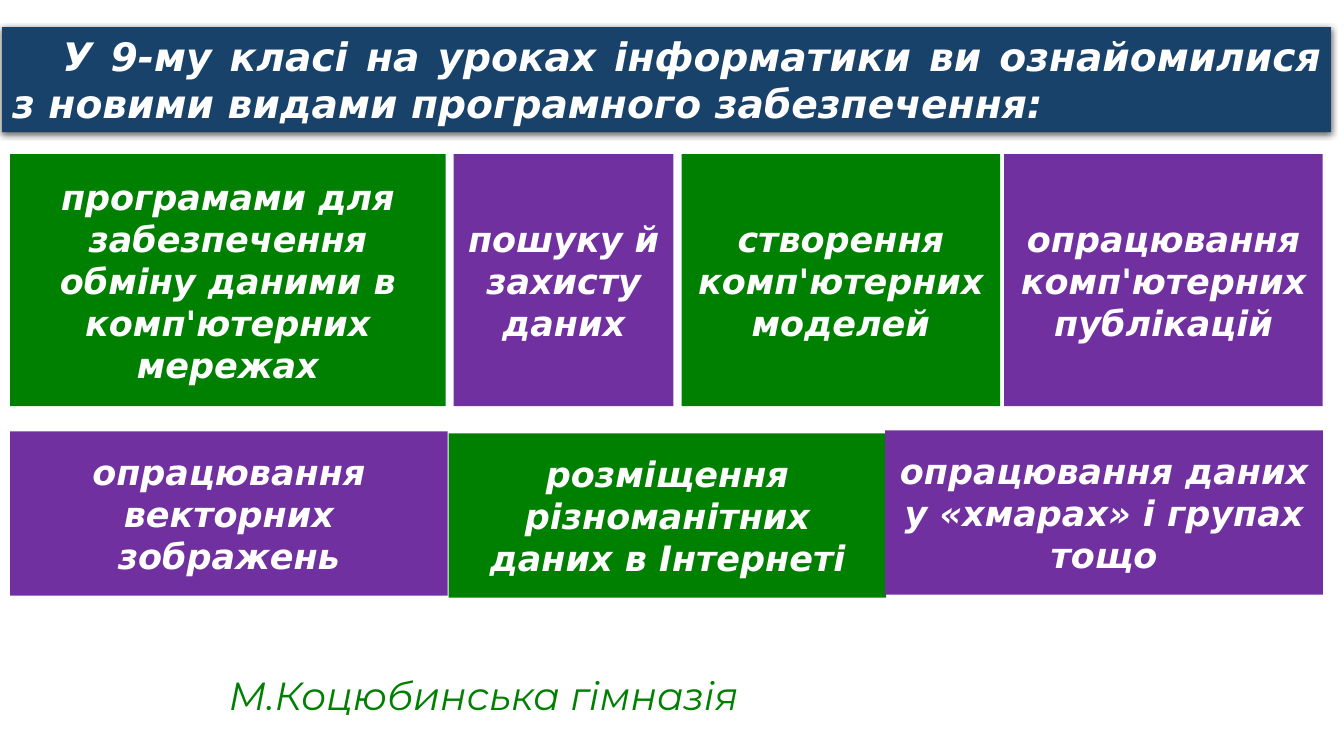
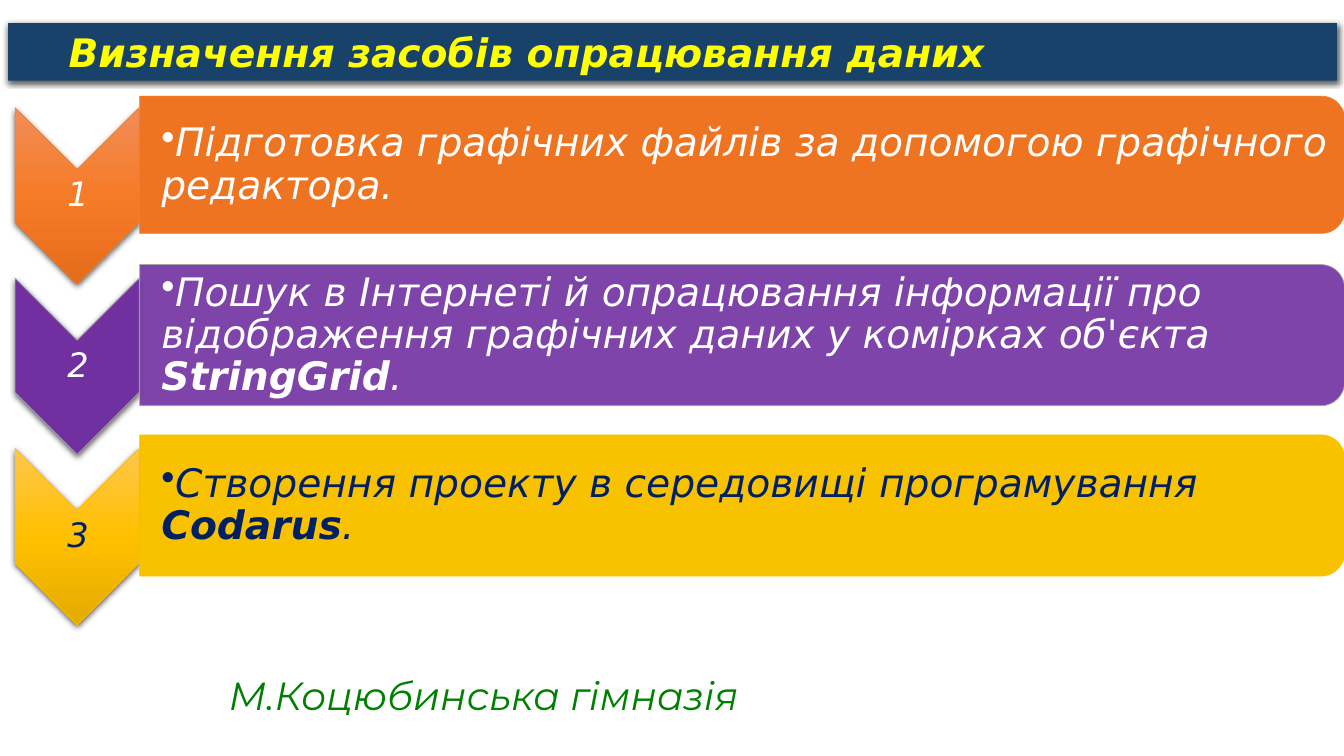
import pptx
import pptx.util
import pptx.dml.color
import pptx.enum.shapes
import pptx.enum.text
import pptx.oxml
import pptx.oxml.ns
import lxml.etree

PX = 9144  # 100 px to the inch
FONT = "DejaVu Sans"
HUES = {
    "navy": "19426B", "white": "FFFFFF", "yellow": "FFFF00", "ink": "002060",
    "green": "008000", "purple": "7030A0", "grey": "A5A5A5",
    "orange": "EF7421", "rust": "ED7D31", "gold": "F8C200", "amber": "FFC000",
}
FORMS = pptx.enum.shapes.MSO_SHAPE
ALIGN = pptx.enum.text.PP_ALIGN
ANCHOR = pptx.enum.text.MSO_ANCHOR
qn = pptx.oxml.ns.qn
rgb = pptx.dml.color.RGBColor.from_string


def write(shape, text, size=28, hue="white", font=FONT, bold=False,
          align=ALIGN.LEFT, anchor=ANCHOR.MIDDLE, inset=(10, 5, 10, 5),
          space=None, indent=0, bullet=None):
    """Fill a shape with one italic paragraph; parts between * are bold."""
    frame = shape.text_frame
    frame.word_wrap = True
    frame.auto_size = pptx.enum.text.MSO_AUTO_SIZE.NONE
    frame.vertical_anchor = anchor
    (frame.margin_left, frame.margin_top,
     frame.margin_right, frame.margin_bottom) = [n * PX for n in inset]
    para = frame.paragraphs[0]
    para.alignment = align
    para.line_spacing = space
    props = para._p.get_or_add_pPr()
    props.set("marL", "0")
    props.set("indent", str(indent * PX))
    if bullet:
        lxml.etree.SubElement(props, qn("a:buChar"), char=bullet)
    for i, part in enumerate(text.split("*")):
        run = para.add_run()
        run.text = part
        run.font.name = font
        run.font.size = pptx.util.Pt(size)
        run.font.bold = bold or i % 2 == 1
        run.font.italic = True
        run.font.color.rgb = rgb(HUES[hue])


def paint(shape, fill, line=None, shade=False, stops=None, alpha=None):
    """Set fill, outline and shadow of a shape."""
    props = shape.element.spPr
    if stops:
        shape.fill.gradient()
        shape.fill.gradient_angle = 270
        grad = props.find(qn("a:gradFill"))
        grad.set("rotWithShape", "0")
        marks = grad.find(qn("a:gsLst"))
        for old in list(marks):
            marks.remove(old)
        for spot, tone in zip((0, 50000, 100000), stops):
            mark = lxml.etree.SubElement(marks, qn("a:gs"), pos=str(spot))
            lxml.etree.SubElement(mark, qn("a:srgbClr"), val=tone)
    else:
        shape.fill.solid()
        shape.fill.fore_color.rgb = rgb(HUES[fill])
        if alpha:
            tone = props.find(qn("a:solidFill")).find(qn("a:srgbClr"))
            lxml.etree.SubElement(tone, qn("a:alpha"), val=str(alpha * 1000))
    if line:
        shape.line.color.rgb = rgb(HUES[line])
        shape.line.width = pptx.util.Pt(0.5)
    else:
        shape.line.fill.background()
    shape.shadow.inherit = False
    if shade:
        cast = lxml.etree.SubElement(
            props.find(qn("a:effectLst")), qn("a:outerShdw"), blurRad="57150",
            dist="19050", dir="5400000", algn="ctr", rotWithShape="0")
        tone = lxml.etree.SubElement(cast, qn("a:srgbClr"), val="000000")
        lxml.etree.SubElement(tone, qn("a:alpha"), val="63000")


deck = pptx.Presentation()
deck.slide_width = pptx.util.Inches(13.33)
deck.slide_height = pptx.util.Inches(7.5)

# Title band and footer of both slides
heads = [
    ("У 9-му класі на уроках інформатики ви ознайомилися "
     "з новими видами програмного забезпечення:", "white", 2, 27, 104),
    ("Визначення засобів опрацювання даних", "yellow", 8, 23, 57),
]
slides = []
for text, hue, x, y, h in heads:
    slide = deck.slides.add_slide(deck.slide_layouts[5])
    band = slide.shapes.title
    band.left, band.top, band.width, band.height = x * PX, y * PX, 1318 * PX, h * PX
    paint(band, "navy", shade=True)
    write(band, text, hue=hue, bold=True, align=ALIGN.JUSTIFY,
          anchor=ANCHOR.TOP, indent=50)
    foot = slide.shapes.add_textbox(217 * PX, 661 * PX, 693 * PX, 55 * PX)
    write(foot, "М.Коцюбинська гімназія", hue="green", font="Montserrat",
          anchor=ANCHOR.TOP)
    slides.append(slide)

# Slide 1: kinds of software
tiles = [
    (10, 153, 432, 250, "green",
     "програмами для забезпечення обміну даними в комп'ютерних мережах"),
    (450, 153, 218, 250, "purple", "пошуку й захисту даних"),
    (676, 153, 316, 250, "green", "створення комп'ютерних моделей"),
    (996, 153, 316, 250, "purple", "опрацювання комп'ютерних публікацій"),
    (10, 428, 434, 163, "purple", "опрацювання векторних зображень"),
    (445, 430, 434, 163, "green", "розміщення різноманітних даних в Інтернеті"),
    (878, 427, 434, 163, "purple", "опрацювання даних у «хмарах» і групах тощо"),
]
for x, y, w, h, fill, text in tiles:
    tile = slides[0].shapes.add_shape(FORMS.RECTANGLE, x * PX, y * PX, w * PX, h * PX)
    paint(tile, fill)
    write(tile, text, size=25, bold=True, align=ALIGN.CENTER)

# Slide 2: numbered steps, each a chevron beside a panel
steps = [
    ("Підготовка графічних файлів за допомогою графічного редактора.",
     "orange", "rust", "white", 136, ("F18C57", "F67B28", "E56C19"), None),
    ("Пошук в Інтернеті й опрацювання інформації про відображення "
     "графічних даних у комірках об'єкта *StringGrid*.",
     "purple", "grey", "white", 140, None, 90),
    ("Створення проекту в середовищі програмування *Codarus*.",
     "gold", "amber", "ink", 140, ("FFC64B", "FFC000", "E3AB00"), None),
]
shapes = slides[1].shapes
for i, (text, fill, line, hue, h, stops, alpha) in enumerate(steps):
    mid = 164 + 169 * i

    # Both outlines are turned a quarter, so width and height swap
    arrow = shapes.add_shape(FORMS.CHEVRON, -11 * PX, (mid - 31) * PX,
                             175 * PX, 123 * PX)
    arrow.rotation = 90
    paint(arrow, fill, line, shade=True, stops=stops)
    label = shapes.add_textbox(16 * PX, (mid + 4) * PX, 123 * PX, 53 * PX)
    write(label, str(i + 1), size=24, hue=hue, align=ALIGN.CENTER,
          inset=(2, 2, 2, 2), space=0.9)

    panel = shapes.add_shape(FORMS.ROUND_2_SAME_RECTANGLE, (736 - h // 2) * PX,
                             (mid - 598) * PX, h * PX, 1195 * PX)
    panel.rotation = 90
    paint(panel, fill, line, alpha=alpha)
    body = shapes.add_textbox(138 * PX, (mid - 63) * PX, 1189 * PX, 126 * PX)
    write(body, text, hue=hue, inset=(22, 2, 2, 2), space=0.9, bullet="•")

deck.save("out.pptx")
